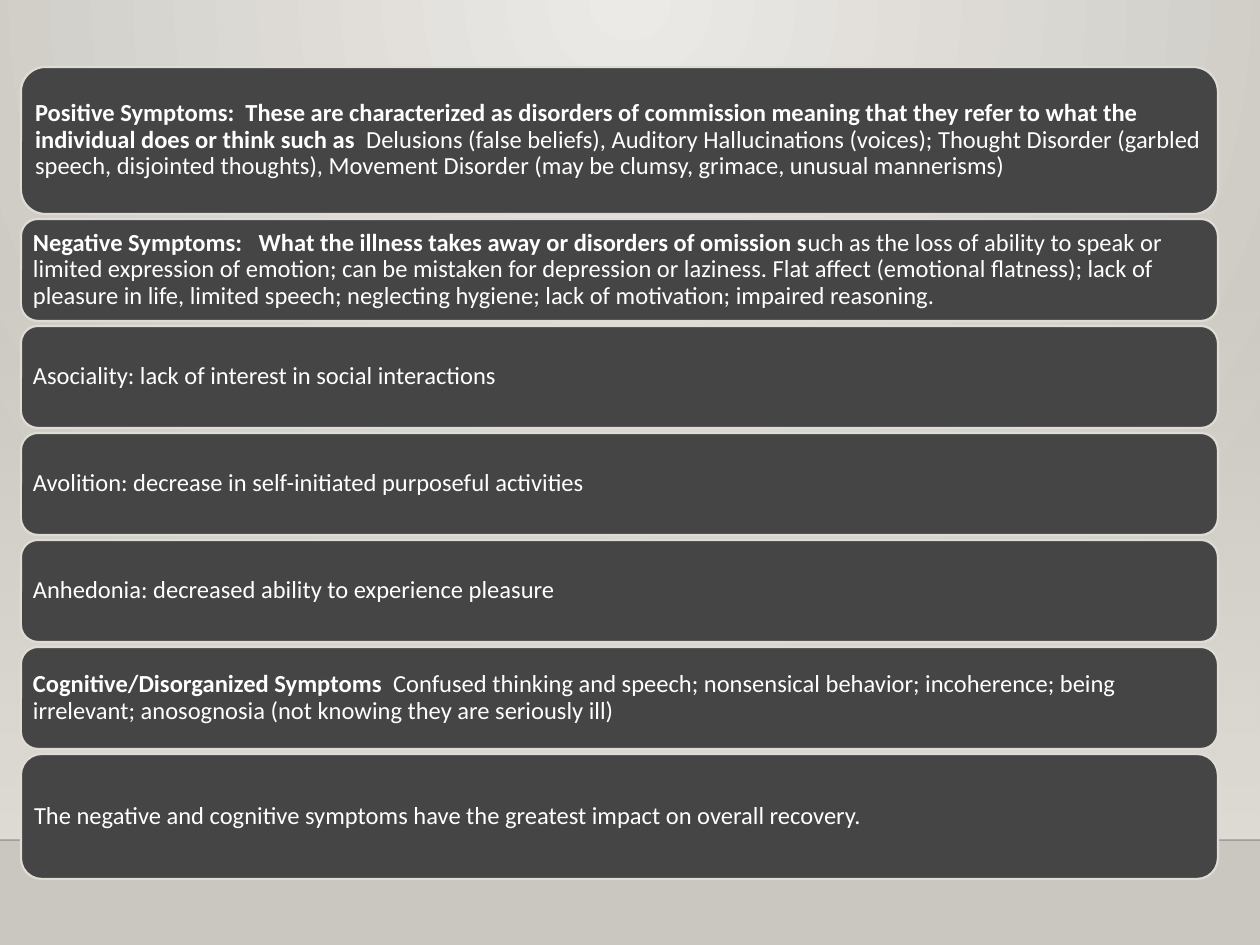
from dataclasses import dataclass

from lxml import etree
from pptx import Presentation, util as u
from pptx.dml.color import RGBColor
from pptx.enum import shapes, text
from pptx.oxml.ns import qn

SCALE = 914400 / 126
WIDTH, HEIGHT = 1260, 945
HORIZON = 840
BAR_LEFT, BAR_TOP, BAR_WIDTH, BAR_GAP = 21, 67, 1197, 5


@dataclass(frozen=True)
class Theme:
    glow: str = "ECEAE7"
    wall: str = "CAC7C1"
    floor: str = "DFDBD5"
    horizon: str = "000001"
    bar: str = "454545"
    text: str = "FFFFFF"
    font: str = "Calibri"
    size: int = 14


THEME = Theme()

# Height, bold lead, regular text
BARS = [
    (147,
     "Positive Symptoms:  These are characterized as disorders of commission "
     "meaning that they refer to what the individual does or think such as  ",
     "Delusions (false beliefs), Auditory Hallucinations (voices); Thought Disorder "
     "(garbled speech, disjointed thoughts), Movement Disorder (may be clumsy, "
     "grimace, unusual mannerisms)"),
    (102,
     "Negative Symptoms:   What the illness takes away or disorders of omission s",
     "uch as the loss of ability to speak or limited expression of emotion; can be "
     "mistaken for depression or laziness. Flat affect (emotional flatness); lack of "
     "pleasure in life, limited speech; neglecting hygiene; lack of motivation; "
     "impaired reasoning."),
    (102, "", "Asociality: lack of interest in social interactions"),
    (102, "", "Avolition: decrease in self-initiated purposeful activities"),
    (102, "", "Anhedonia: decreased ability to experience pleasure"),
    (102, "Cognitive/Disorganized Symptoms  ",
     "Confused thinking and speech; nonsensical behavior; incoherence; being "
     "irrelevant; anosognosia (not knowing they are seriously ill)"),
    (125, "", "The negative and cognitive symptoms have the greatest impact on "
              "overall recovery."),
]


def px(*lengths):
    return [u.Emu(round(n * SCALE)) for n in lengths]


def rgb(color):
    return RGBColor.from_string(color)


def set_alpha(parent, percent):
    """Make the first RGB colour under parent partly transparent."""
    color = next(parent.iter(qn("a:srgbClr")))
    etree.SubElement(color, qn("a:alpha"), val=str(percent * 1000))


def fill_gradient(fill, start, end):
    fill.gradient()
    for stop, color, position in zip(fill.gradient_stops, (start, end), (0, 1)):
        stop.color.rgb = rgb(color)
        stop.position = position


def add_background(slide):
    """Fill the slide with a round glow centred on the top edge."""
    fill_gradient(slide.background.fill, THEME.glow, THEME.wall)
    grad = next(slide.element.iter(qn("a:gradFill")))
    circle = etree.Element(qn("a:path"), path="circle")
    etree.SubElement(circle, qn("a:fillToRect"), l="43000", t="0", r="43000", b="100000")
    grad.replace(grad.find(qn("a:lin")), circle)


def add_floor(slide):
    top = 277
    sp = slide.shapes.add_shape(shapes.MSO_SHAPE.RECTANGLE, *px(0, top, WIDTH, HORIZON - top))
    sp.shadow.inherit = False
    sp.line.fill.background()
    fill_gradient(sp.fill, THEME.floor, THEME.floor)
    sp.fill.gradient_angle = 270
    set_alpha(sp.element, 0)


def add_horizon(slide):
    line = slide.shapes.add_connector(
        shapes.MSO_CONNECTOR.STRAIGHT, *px(0, HORIZON, WIDTH, HORIZON))
    line.line.color.rgb = rgb(THEME.horizon)
    line.line.width = u.Pt(1)
    set_alpha(line.element, 20)
    etree.SubElement(line.element.spPr, qn("a:effectLst"))


def add_run(p, words, *, bold=False, color=THEME.text, size=THEME.size):
    r = p.add_run()
    r.text = words
    r.font.name = THEME.font
    r.font.size = u.Pt(size)
    r.font.bold = bold
    r.font.color.rgb = rgb(color)


def add_bar(slide, top, height, lead, words):
    sp = slide.shapes.add_shape(
        shapes.MSO_SHAPE.ROUNDED_RECTANGLE, *px(BAR_LEFT, top, BAR_WIDTH, height))
    sp.shadow.inherit = False
    sp.fill.solid()
    sp.fill.fore_color.rgb = rgb(THEME.bar)
    sp.line.color.rgb = rgb(THEME.floor)
    sp.line.width = u.Pt(1.25)

    tf = sp.text_frame
    tf.word_wrap = True
    tf.vertical_anchor = text.MSO_ANCHOR.MIDDLE
    tf.margin_left, tf.margin_top, tf.margin_right, tf.margin_bottom = px(7, 7, 7, 7)
    p = tf.paragraphs[0]
    p.alignment = text.PP_ALIGN.LEFT
    p.line_spacing = 0.9
    if lead:
        add_run(p, lead, bold=True)
    add_run(p, words)


def main():
    prs = Presentation()
    prs.slide_width, prs.slide_height = px(WIDTH, HEIGHT)
    slide = prs.slides.add_slide(prs.slide_layouts[6])
    add_background(slide)
    add_floor(slide)
    add_horizon(slide)
    top = BAR_TOP
    for height, lead, words in BARS:
        add_bar(slide, top, height, lead, words)
        top += height + BAR_GAP
    prs.save("out.pptx")


if __name__ == "__main__":
    main()
